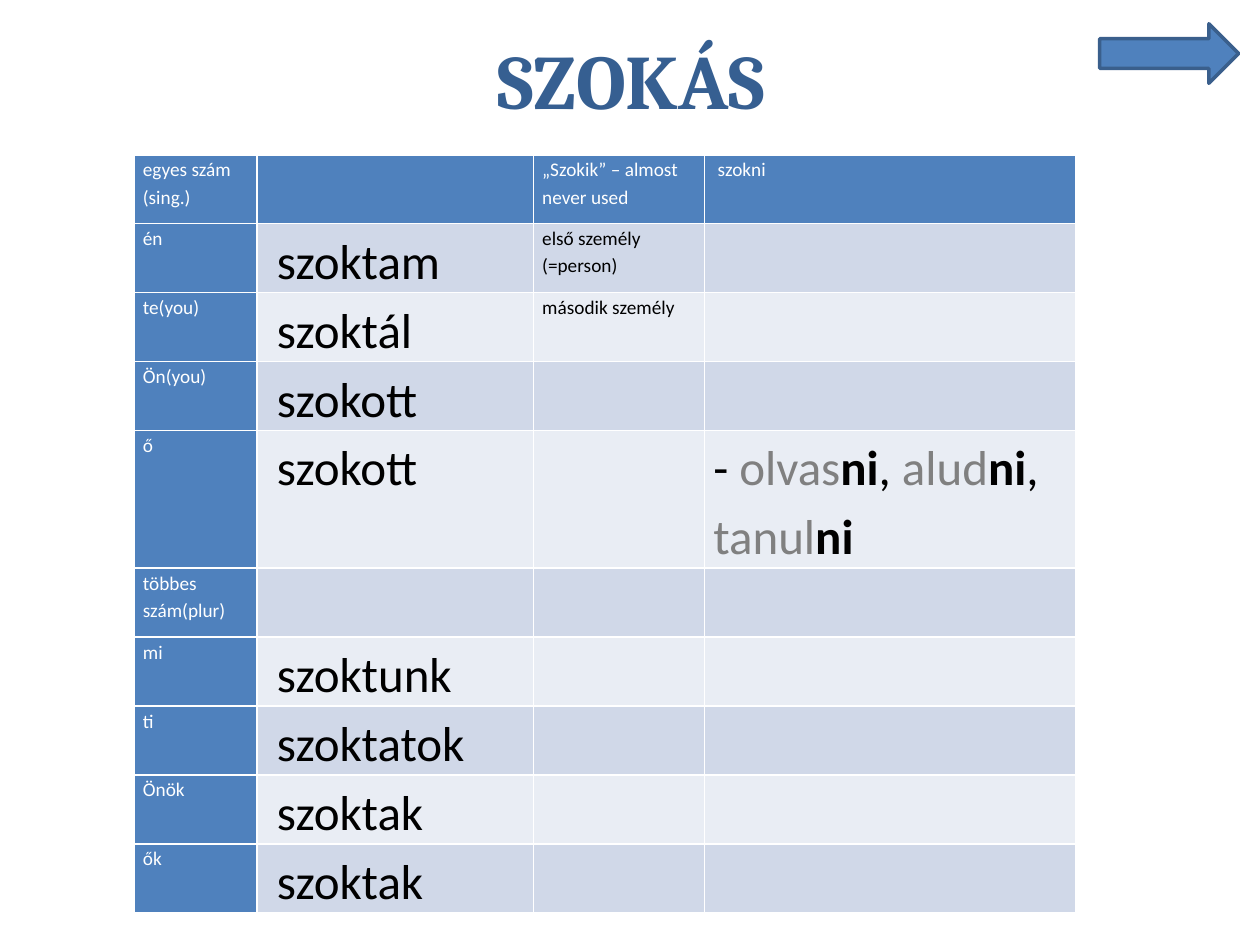
from dataclasses import dataclass

from pptx import Presentation
from pptx.dml.color import RGBColor as Color
from pptx.enum.shapes import MSO_SHAPE as Shape
from pptx.enum.text import MSO_ANCHOR as Anchor, PP_ALIGN as Align
from pptx.util import Cm, Pt


@dataclass(frozen=True)
class Theme:
    blue: Color = Color.from_string("4F81BD")
    outline: Color = Color.from_string("3A5F8C")
    title: Color = Color.from_string("365F91")
    bands: tuple = (Color.from_string("E9EDF4"), Color.from_string("D0D8E8"))
    white: Color = Color.from_string("FFFFFF")
    black: Color = Color.from_string("000000")
    stem: Color = Color.from_string("808080")
    heading_font: str = "Cambria"
    body_font: str = "Calibri"
    title_size: Pt = Pt(44)
    verb_size: Pt = Pt(28)
    label_size: Pt = Pt(11)


def style(font, name, size, color, bold=False):
    font.name, font.size, font.bold = name, size, bold
    font.color.rgb = color


theme = Theme()
deck = Presentation()
deck.slide_width, deck.slide_height = Cm(25.4), Cm(19.05)
page = deck.slides.add_slide(deck.slide_layouts[6])

title_box = page.shapes.add_textbox(Cm(1.3), Cm(0), Cm(22.86), Cm(3.18))
title_frame = title_box.text_frame
title_frame.word_wrap = True
title_frame.vertical_anchor = Anchor.MIDDLE
para = title_frame.paragraphs[0]
para.text = "SZOKÁS"
para.alignment = Align.CENTER
style(para.font, theme.heading_font, theme.title_size, theme.title, True)

rows = [
    ("egyes szám (sing.)", "", "„Szokik” – almost never used", "\u00a0szokni"),
    ("én", " szoktam", "első személy (=person)", ""),
    ("te(you)", " szoktál", "második személy", ""),
    ("Ön(you)", " szokott", "", ""),
    ("ő", " szokott", "", "- "),
    ("többes szám(plur)", "", "", ""),
    ("mi", " szoktunk", "", ""),
    ("ti", " szoktatok", "", ""),
    ("Önök", " szoktak", "", ""),
    ("ők", " szoktak", "", ""),
]
infinitive_row = 4
infinitive_stems = ("olvas", "alud", "tanul")
column_widths = (2.48, 5.57, 3.45, 7.48)
row_height = 1.39

table = page.shapes.add_table(
    len(rows), len(column_widths), Cm(2.7), Cm(3.12),
    Cm(sum(column_widths)), Cm(row_height * (len(rows) + 1)),
).table
table.first_col = True
for column, width in zip(table.columns, column_widths):
    column.width = Cm(width)

for row_index, texts in enumerate(rows):
    table.rows[row_index].height = Cm(row_height * (2 if row_index == infinitive_row else 1))
    for column_index, text in enumerate(texts):
        cell = table.cell(row_index, column_index)
        is_header = row_index == 0 or column_index == 0
        is_verb = not is_header and column_index in (1, 3)
        cell.fill.solid()
        cell.fill.fore_color.rgb = theme.blue if is_header else theme.bands[row_index % 2]
        if not text:
            continue
        cell.margin_left = cell.margin_right = Cm(0.18)
        cell.margin_top = cell.margin_bottom = Cm(0)
        para = cell.text_frame.paragraphs[0]
        para.line_spacing = 1.15
        para.space_before = Pt(10)
        para.add_run().text = text
        style(para.font, theme.body_font,
              theme.verb_size if is_verb else theme.label_size,
              theme.white if is_header else theme.black)

para = table.cell(infinitive_row, 3).text_frame.paragraphs[0]
for index, stem in enumerate(infinitive_stems):
    if index:
        para.add_run().text = ", "
    span = para.add_run()
    span.text = stem
    span.font.color.rgb = theme.stem
    span = para.add_run()
    span.text = "ni"
    span.font.bold = True

arrow = page.shapes.add_shape(Shape.RIGHT_ARROW, Cm(22.17), Cm(0.48), Cm(2.8), Cm(1.2))
arrow.shadow.inherit = False
arrow.fill.solid()
arrow.fill.fore_color.rgb = theme.blue
arrow.line.color.rgb = theme.outline
arrow.line.width = Pt(2)

deck.save("out.pptx")
